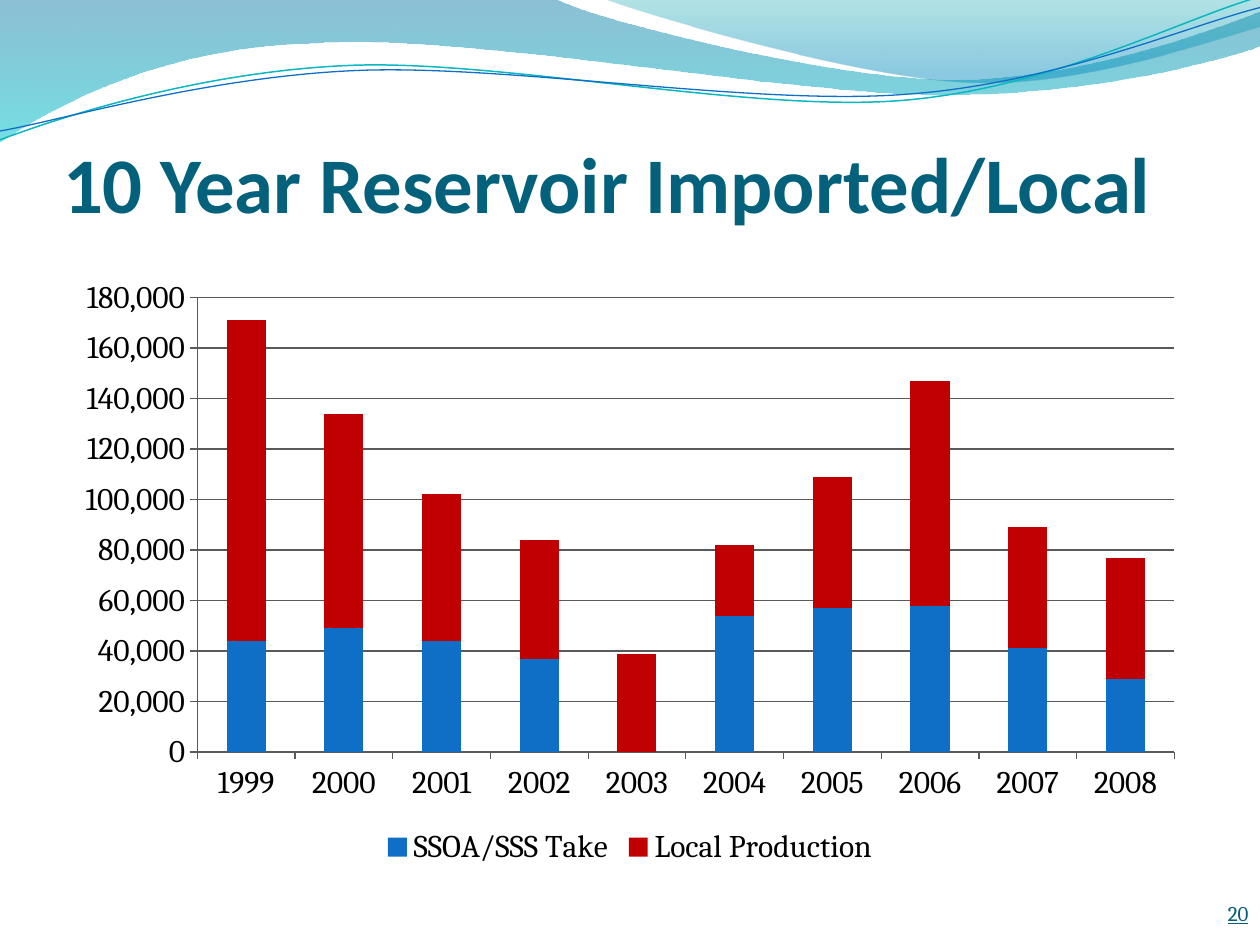
"""Build the reservoir slide: wave banner, title, stacked column chart and page number."""
from lxml.etree import SubElement
from pptx import Presentation
from pptx.chart.data import CategoryChartData
from pptx.dml.color import RGBColor as Color
from pptx.enum.chart import XL_CHART_TYPE as ChartType, XL_LEGEND_POSITION as LegendPosition
from pptx.enum.chart import XL_TICK_MARK as TickMark
from pptx.enum.text import MSO_ANCHOR as Anchor, MSO_AUTO_SIZE as AutoSize, PP_ALIGN as Align
from pptx.oxml.ns import qn
from pptx.util import Inches, Pt

THEME = {
    "heading_font": "Calibri", "body_font": "Cambria",
    "heading": Color.from_string("04617B"), "page": Color.from_string("045D75"),
    "text": Color.from_string("000000"), "axis": Color.from_string("595959"),
    "take": Color.from_string("0F6FC6"), "local": Color.from_string("C00000"),
    "heading_size": Pt(45), "chart_size": Pt(18), "page_size": Pt(12),
}

deck = Presentation()
deck.slide_width, deck.slide_height = Inches(10), Inches(7.5)
width, height = deck.slide_width, deck.slide_height
slide = deck.slides.add_slide(deck.slide_layouts[5])


def draw_wave(start, segments, close):
    """Draw straight (x, y) and cubic (three points) segments, in thousandths of the slide width."""
    points = [pair for segment in segments for pair in zip(segment[::2], segment[1::2])]
    builder = slide.shapes.build_freeform(*start, scale=width / 1000)
    builder.add_line_segments(points, close=close)
    wave = builder.convert_to_shape()
    wave.shadow.inherit = False
    outline = next(wave.element.spPr.iter(qn("a:path")))
    lines = iter(outline.findall(qn("a:lnTo")))
    for segment in segments:
        curve = next(lines)
        if len(segment) == 6:
            curve.tag = qn("a:cubicBezTo")
            for extra in (next(lines), next(lines)):
                curve.append(extra[0])
                outline.remove(extra)
    return wave


def format_text(box, anchor, top_inset):
    """Set insets and anchor of a one-line box and return its paragraph."""
    frame = box.text_frame
    frame.word_wrap, frame.auto_size = True, AutoSize.NONE
    frame.vertical_anchor = anchor
    frame.margin_left = frame.margin_right = frame.margin_bottom = 0
    frame.margin_top = top_inset
    return frame.paragraphs[0]


bands = [
    ((0, 0), [(440, -1), (476, 17, 664, 63, 758, 63), (853, 63, 958, 26, 1000, 9), (1001, 36),
              (983, 44, 870, 76, 746, 75), (622, 75, 382, 28, 257, 34),
              (129, 36, 46, 83, -1, 113)],
     [(0, "0074A1", 45), (1, "00C6CF", 55)]),
    ((479, -1), [(509, 11, 682, 62, 769, 65), (856, 69, 961, 32, 1000, 21), (1000, 0)],
     [(0, "00A1A9", 30), (0.8, "008BBF", 45)]),
]
for start, segments, stops in bands:
    band = draw_wave(start, segments, True)
    band.line.fill.background()
    band.fill.gradient()
    band.fill.gradient_angle = 270
    for stop, (position, color, _) in zip(band.fill.gradient_stops, stops):
        stop.position, stop.color.rgb = position, Color.from_string(color)
    for tint, (_, _, opacity) in zip(band.element.spPr.iter(qn("a:srgbClr")), stops):
        SubElement(tint, qn("a:alpha"), val=str(opacity * 1000))

strands = [
    ((0, 111), [(48, 93, 158, 57, 277, 52), (395, 47, 593, 89, 713, 80),
                (833, 71, 938, 15, 998, -2)], "0AB8BF", 0.85),
    ((0, 104), [(47, 96, 164, 61, 283, 56), (403, 51, 597, 84, 717, 75),
                (836, 67, 941, 21, 1000, 6)], "0F6FC6", 0.75),
]
for start, segments, color, weight in strands:
    strand = draw_wave(start, segments, False)
    strand.fill.background()
    strand.line.color.rgb, strand.line.width = Color.from_string(color), Pt(weight)

margin, content_width = int(width * 0.05), int(width * 0.9)
title = slide.shapes.title
title.left, title.top = margin, Inches(0.92)
title.width, title.height = content_width, int(height * 0.12)
title.text = "10 Year Reservoir Imported/Local"
para = format_text(title, Anchor.BOTTOM, Inches(0.05))
para.alignment = Align.LEFT
para.font.name, para.font.size, para.font.bold = THEME["heading_font"], THEME["heading_size"], True
para.font.color.rgb = THEME["heading"]

data = CategoryChartData(number_format="#,##0")
data.categories = [str(year) for year in range(1999, 2009)]
data.add_series("SSOA/SSS Take",
                [44000, 49000, 44000, 37000, None, 54000, 57000, 58000, 41000, 29000])
data.add_series("Local Production",
                [127000, 85000, 58000, 47000, 39000, 28000, 52000, 89000, 48000, 48000])
chart = slide.shapes.add_chart(ChartType.COLUMN_STACKED, margin, Inches(2.12),
                               content_width, int(height * 0.64), data).chart
chart.has_title = False
chart.font.name, chart.font.size = THEME["body_font"], THEME["chart_size"]
chart.font.color.rgb = THEME["text"]
chart.has_legend = True
chart.legend.position, chart.legend.include_in_layout = LegendPosition.BOTTOM, False

plot = chart.plots[0]
plot.gap_width, plot.overlap, plot.vary_by_categories = 150, 100, False
for series, role in zip(plot.series, ("take", "local")):
    series.format.fill.solid()
    series.format.fill.fore_color.rgb = THEME[role]

values = chart.value_axis
values.minimum_scale, values.maximum_scale, values.major_unit = 0, 180000, 20000
values.tick_labels.number_format, values.tick_labels.number_format_is_linked = "#,##0", False
values.has_major_gridlines = True
for axis in (chart.category_axis, values):
    axis.major_tick_mark = TickMark.OUTSIDE
for ruled in (chart.category_axis, values, values.major_gridlines):
    ruled.format.line.color.rgb, ruled.format.line.width = THEME["axis"], Pt(0.75)

number = slide.shapes.add_textbox(Inches(9.08), Inches(6.95), Inches(0.83), Inches(0.4))
number.text_frame.text = "20"
para = format_text(number, Anchor.BOTTOM, 0)
para.alignment = Align.RIGHT
para.font.name, para.font.size, para.font.underline = THEME["body_font"], THEME["page_size"], True
para.font.color.rgb = THEME["page"]

deck.save("out.pptx")
